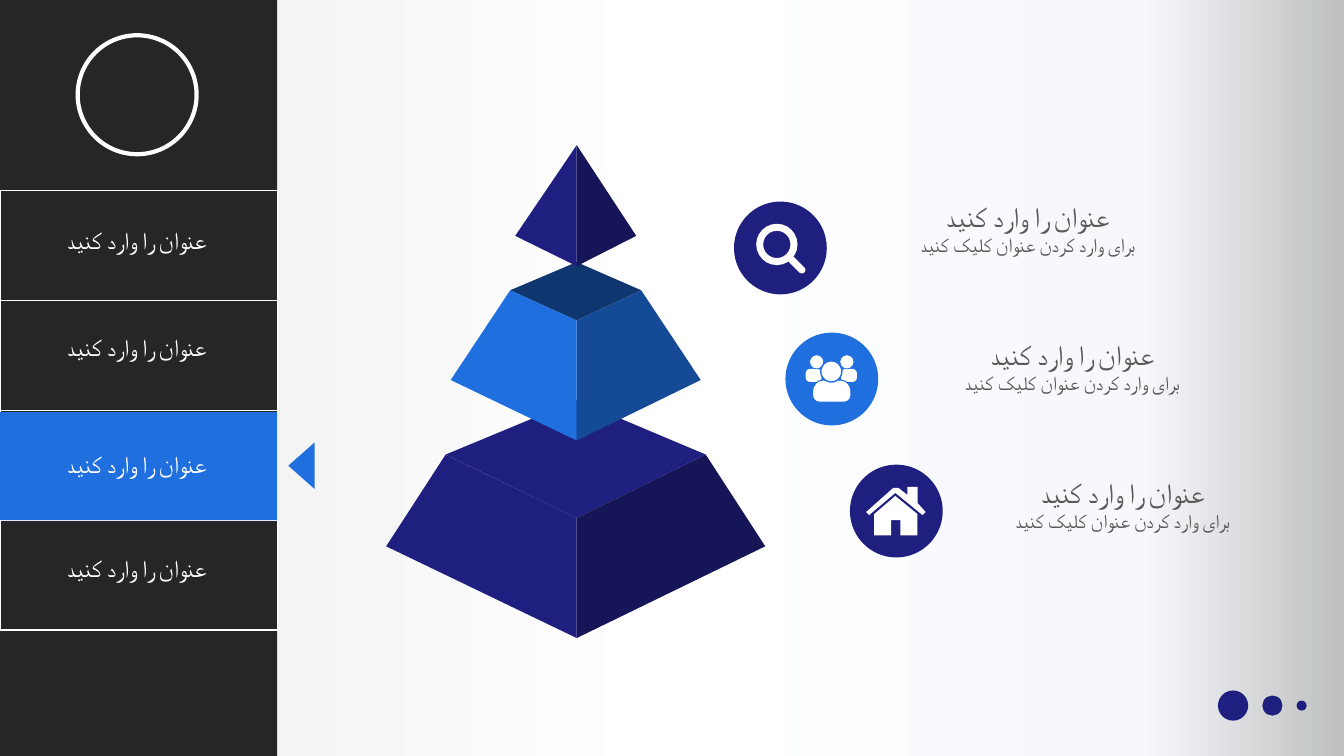
from lxml import etree
from pptx import Presentation
from pptx.dml.color import RGBColor
from pptx.enum.shapes import MSO_SHAPE
from pptx.enum.text import PP_ALIGN
from pptx.oxml.ns import qn
from pptx.util import Pt

PX = 9144  # EMU per px, 100 px to the inch
RECT = MSO_SHAPE.RECTANGLE
ROUND_RECT = MSO_SHAPE.ROUNDED_RECTANGLE
ROUND_TOP = MSO_SHAPE.ROUND_2_SAME_RECTANGLE
OVAL = MSO_SHAPE.OVAL
DONUT = MSO_SHAPE.DONUT
TRIANGLE = MSO_SHAPE.ISOSCELES_TRIANGLE
CENTER = PP_ALIGN.CENTER

FONT = "Noto Sans CJK SC"
NAVY, NAVY_DARK = "1F1F7F", "151557"
BLUE, BLUE_DARK, BLUE_DEEP = "1F6FDF", "154A97", "0F366F"
WHITE, CHARCOAL, GREY = "FFFFFF", "262626", "595959"

TITLE = "عنوان را وارد کنید"
SUBTITLE = "برای وارد کردن عنوان کلیک کنید"

BACKGROUND = [(0, "BFBFBF"), (15, "F6F8FC"), (50, WHITE), (85, "F2F2F2"), (100, "BFBFBF")]
MENU_TOP, MENU_STEP, MENU_WIDTH = 189, 109, 275
MENU_TEXT_TOPS = [219, 325, 441, 544]
APEX_X = 572
FACES = [
    (NAVY, [(442, 451), (APEX_X, 397), (700, 451), (APEX_X, 514)]),
    (NAVY_DARK, [(APEX_X, 633), (759, 542), (700, 451), (APEX_X, 514)]),
    (NAVY, [(APEX_X, 514), (442, 451), (383, 542), (APEX_X, 633)]),
    (BLUE_DEEP, [(506, 288), (APEX_X, 260), (636, 288), (APEX_X, 318)]),
    (BLUE_DARK, [(APEX_X, 437), (695, 377), (636, 288), (APEX_X, 318)]),
    (BLUE, [(APEX_X, 318), (506, 288), (447, 377), (APEX_X, 437)]),
    (NAVY_DARK, [(APEX_X, 264), (631, 234), (APEX_X, 144)]),
    (NAVY, [(APEX_X, 144), (511, 234), (APEX_X, 264)]),
]
ROOF = [(859, 508), (886, 484), (891, 484), (900, 491), (900, 483), (910, 483),
        (910, 499), (918, 508), (915, 511), (888, 489), (862, 511)]
WALLS = [(867, 510), (888, 492), (910, 510), (910, 531), (893, 531),
         (893, 516), (884, 516), (884, 531), (867, 531)]
DOTS = [(1208, 685, 30), (1252, 690, 20), (1286, 695, 10)]


def rgb(color):
    return RGBColor.from_string(color)


def paint(sp, fill, line=None, weight=1):
    sp.shadow.inherit = False
    if fill:
        sp.fill.solid()
        sp.fill.fore_color.rgb = rgb(fill)
    else:
        sp.fill.background()
    if line:
        sp.line.color.rgb = rgb(line)
        sp.line.width = Pt(weight)
    else:
        sp.line.fill.background()
    return sp


def add_preset(s, kind, x, y, w, h, fill, line=None, weight=1, adj=()):
    sp = s.shapes.add_shape(kind, x * PX, y * PX, w * PX, h * PX)
    for i, value in enumerate(adj):
        sp.adjustments[i] = value
    return paint(sp, fill, line, weight)


def add_polygon(s, points, fill):
    builder = s.shapes.build_freeform(*points[0], scale=PX)
    builder.add_line_segments(points[1:], close=True)
    return paint(builder.convert_to_shape(), fill)


def add_text(s, x, y, w, h, lines, color):
    """Centred right-to-left paragraphs, given as (text, size) pairs."""
    tf = s.shapes.add_textbox(x * PX, y * PX, w * PX, h * PX).text_frame
    tf.word_wrap = True
    for i, (text, size) in enumerate(lines):
        p = tf.paragraphs[0] if i == 0 else tf.add_paragraph()
        p.text = text
        p.alignment = CENTER
        p.font.name = FONT
        p.font.size = Pt(size)
        p.font.color.rgb = rgb(color)
        props = p._p.get_or_add_pPr()
        props.set("rtl", "1")
        etree.SubElement(props.find(qn("a:defRPr")), qn("a:cs"), typeface=FONT)


def set_background(s):
    fill = s.background.fill
    fill.gradient()
    grad = s.background._cSld.find(".//" + qn("a:gradFill"))
    stops = grad.find(qn("a:gsLst"))
    for stop in list(stops):
        stops.remove(stop)
    for percent, color in BACKGROUND:
        stop = etree.SubElement(stops, qn("a:gs"), pos=str(percent * 1000))
        etree.SubElement(stop, qn("a:srgbClr"), val=color)
    fill.gradient_angle = 180


def add_sidebar(s):
    add_preset(s, RECT, 0, 0, MENU_WIDTH, 750, CHARCOAL)
    for i in range(len(MENU_TEXT_TOPS)):
        add_preset(s, RECT, 0, MENU_TOP + i * MENU_STEP, MENU_WIDTH, MENU_STEP, None, WHITE)
    add_preset(s, OVAL, 77, 35, 118, 118, None, WHITE, 3)
    add_preset(s, RECT, 0, 409, MENU_WIDTH, 107, BLUE)
    for top in MENU_TEXT_TOPS:
        add_text(s, 38, top, 195, 38, [(TITLE, 17)], WHITE)
    add_preset(s, TRIANGLE, 276, 449, 46, 26, BLUE).rotation = 270


def add_magnifier(s):
    add_preset(s, DONUT, 750, 222, 41, 41, WHITE, adj=[0.17])
    add_preset(s, ROUND_RECT, 779, 259, 22, 7, WHITE, adj=[0.5]).rotation = 45


def add_people(s):
    for x in (799, 834):
        add_preset(s, ROUND_RECT, x, 366, 16, 13, WHITE, adj=[0.35])
    for x in (803, 833):
        add_preset(s, OVAL, x, 352, 14, 14, WHITE, BLUE, 0.5)
    add_preset(s, ROUND_TOP, 806, 377, 38, 22, WHITE, BLUE, 0.75, [0.5, 0.3])
    add_preset(s, OVAL, 814, 358, 21, 21, WHITE, BLUE, 1)


def add_house(s):
    for outline in (ROOF, WALLS):
        add_polygon(s, outline, WHITE)


def add_level(s, x, y, color, add_icon, text_x, text_y):
    add_preset(s, OVAL, x, y, 92, 92, color)
    add_icon(s)
    add_text(s, text_x, text_y, 299, 90, [(TITLE, 20), (SUBTITLE, 14)], GREY)


def main():
    prs = Presentation()
    prs.slide_width, prs.slide_height = 1333 * PX, 750 * PX
    s = prs.slides.add_slide(prs.slide_layouts[6])
    set_background(s)
    add_sidebar(s)
    for x, y, size in DOTS:
        add_preset(s, OVAL, x, y, size, size, NAVY)
    for color, points in FACES:
        add_polygon(s, points, color)
    add_level(s, 728, 200, NAVY, add_magnifier, 870, 193)
    add_level(s, 779, 330, BLUE, add_people, 914, 330)
    add_level(s, 843, 461, NAVY, add_house, 964, 467)
    prs.save("out.pptx")


if __name__ == "__main__":
    main()
